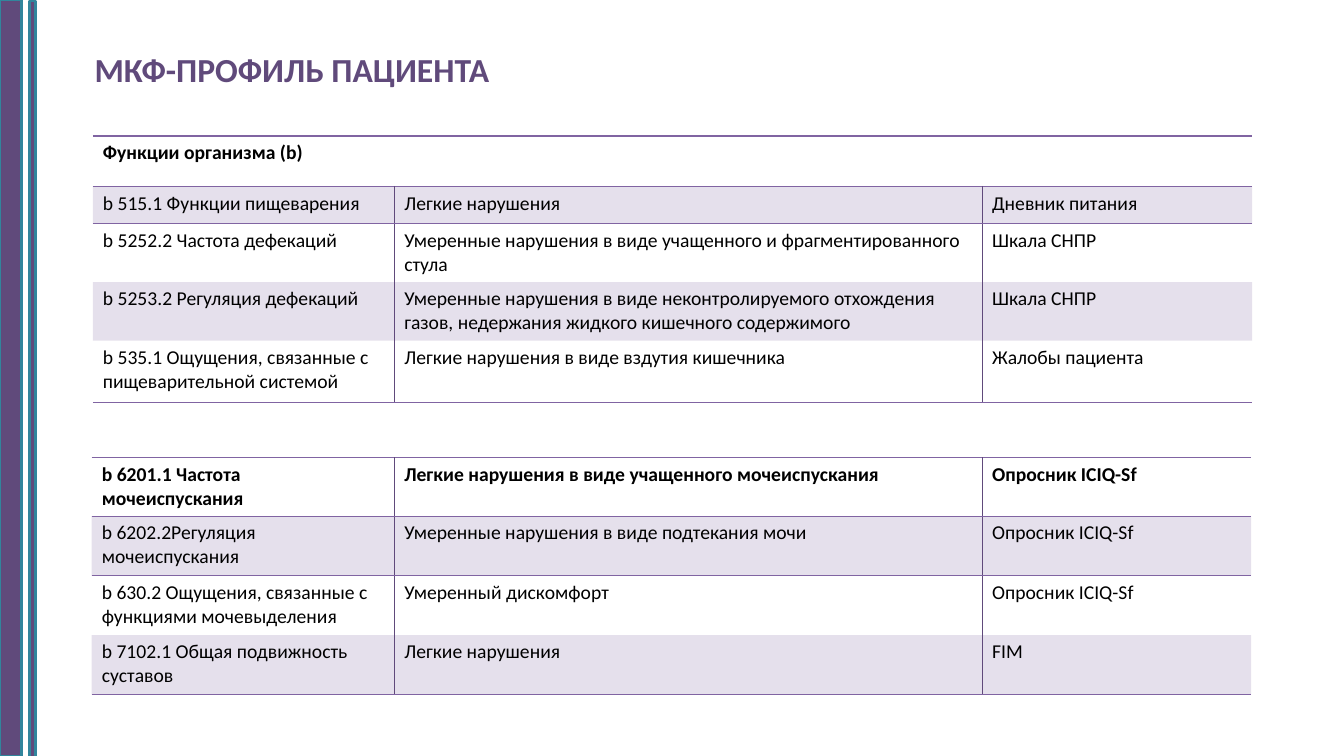
"""Builds the slide with the patient's ICF profile in two tables."""
from lxml import etree
from pptx import Presentation
from pptx.dml.color import RGBColor
from pptx.enum.shapes import MSO_SHAPE
from pptx.oxml.ns import qn
from pptx.util import Inches, Pt

PURPLE = RGBColor(0x60, 0x4A, 0x7B)
LILAC = RGBColor(0x80, 0x64, 0xA2)
TEAL = RGBColor(0x31, 0x85, 0x9C)
BLACK = RGBColor(0, 0, 0)
PLAIN_STYLE = "{2D5ABB26-0587-4C30-8999-92F81FD0307C}"
SHADE_ALPHA = "20000"
RULE = (LILAC, 1)
DIVIDER = (PURPLE, 0.25)

TITLE = "МКФ-ПРОФИЛЬ ПАЦИЕНТА"
STRIPES = [(0, 0, 0.21, 7.5), (0.29, 0.01, 0.06, 7.5)]
PROFILES = [
    {
        "left": 0.92, "top": 1.35,
        "columns": [2.99, 5.83, 2.68],
        "heights": [0.5, 0.37, 0.58, 0.58, 0.61],
        "rows": [
            ("Функции организма (b)",),
            ("b 515.1 Функции пищеварения", "Легкие нарушения", "Дневник питания"),
            ("b 5252.2 Частота дефекаций",
             "Умеренные нарушения в виде учащенного и фрагментированного стула",
             "Шкала СНПР"),
            ("b 5253.2 Регуляция дефекаций",
             "Умеренные нарушения в виде неконтролируемого отхождения газов, "
             "недержания жидкого кишечного содержимого",
             "Шкала СНПР"),
            ("b 535.1 Ощущения, связанные с пищеварительной системой",
             "Легкие нарушения в виде вздутия кишечника", "Жалобы пациента"),
        ],
    },
    {
        "left": 0.91, "top": 4.54,
        "columns": [3, 5.83, 2.67],
        "heights": [0.58, 0.59, 0.59, 0.59],
        "rows": [
            ("b 6201.1 Частота мочеиспускания",
             "Легкие нарушения в виде учащенного мочеиспускания", "Опросник ICIQ-Sf"),
            ("b 6202.2Регуляция мочеиспускания",
             "Умеренные нарушения в виде подтекания мочи", "Опросник ICIQ-Sf"),
            ("b 630.2 Ощущения, связанные с функциями мочевыделения",
             "Умеренный дискомфорт", "Опросник ICIQ-Sf"),
            ("b 7102.1 Общая подвижность суставов", "Легкие нарушения", "FIM"),
        ],
    },
]


def write(frame, text, size, color, bold):
    run = frame.paragraphs[0].add_run()
    run.text = text
    style = {"name": "Calibri", "size": Pt(size), "bold": bold}
    for attribute, value in style.items():
        setattr(run.font, attribute, value)
    run.font.color.rgb = color


def shade(cell):
    cell.fill.solid()
    cell.fill.fore_color.rgb = LILAC
    tint = cell._tc.tcPr.find(".//" + qn("a:srgbClr"))
    etree.SubElement(tint, qn("a:alpha"), val=SHADE_ALPHA)


def draw_borders(cell, borders):
    sides = [side for side in "LRTB" if side in borders]
    for position, side in enumerate(sides):
        color, width = borders[side]
        line = etree.Element(qn("a:ln" + side), w=str(Pt(width)))
        fill = etree.SubElement(line, qn("a:solidFill"))
        etree.SubElement(fill, qn("a:srgbClr"), val=str(color))
        cell._tc.get_or_add_tcPr().insert(position, line)


def add_profile(slide, profile):
    rows, columns, heights = profile["rows"], profile["columns"], profile["heights"]
    box = (profile["left"], profile["top"], sum(columns), sum(heights))
    table = slide.shapes.add_table(len(rows), len(columns), *map(Inches, box)).table
    table.first_row = table.horz_banding = False
    table._tbl.tblPr.find(qn("a:tableStyleId")).text = PLAIN_STYLE
    for column, width in zip(table.columns, columns):
        column.width = Inches(width)
    for r, (texts, height) in enumerate(zip(rows, heights)):
        table.rows[r].height = Inches(height)
        merged = len(texts) == 1
        if merged:
            table.cell(r, 0).merge(table.cell(r, len(columns) - 1))
        for c in range(len(columns)):
            cell = table.cell(r, c)
            if r % 2:
                shade(cell)
            else:
                cell.fill.background()
            borders = {}
            if r <= 1:
                borders["T"] = RULE
            if r in (0, len(rows) - 1):
                borders["B"] = RULE
            if c > 0 and not merged:
                borders["L"] = DIVIDER
            if c < len(columns) - 1 and not merged:
                borders["R"] = DIVIDER
            draw_borders(cell, borders)
            if c < len(texts):
                write(cell.text_frame, texts[c], 14, BLACK, r == 0)


def main():
    deck = Presentation()
    deck.slide_width, deck.slide_height = Inches(13.33), Inches(7.5)
    slide = deck.slides.add_slide(deck.slide_layouts[6])
    for profile in PROFILES:
        add_profile(slide, profile)
    for place in STRIPES:
        stripe = slide.shapes.add_shape(MSO_SHAPE.RECTANGLE, *map(Inches, place))
        stripe.shadow.inherit = False
        stripe.fill.solid()
        stripe.fill.fore_color.rgb = PURPLE
        stripe.line.color.rgb = TEAL
        stripe.line.width = Pt(2)
    title = slide.shapes.add_textbox(*map(Inches, (0.84, 0.44, 6.67, 0.5)))
    title.text_frame.word_wrap = True
    write(title.text_frame, TITLE, 24, PURPLE, True)
    deck.save("out.pptx")


if __name__ == "__main__":
    main()
